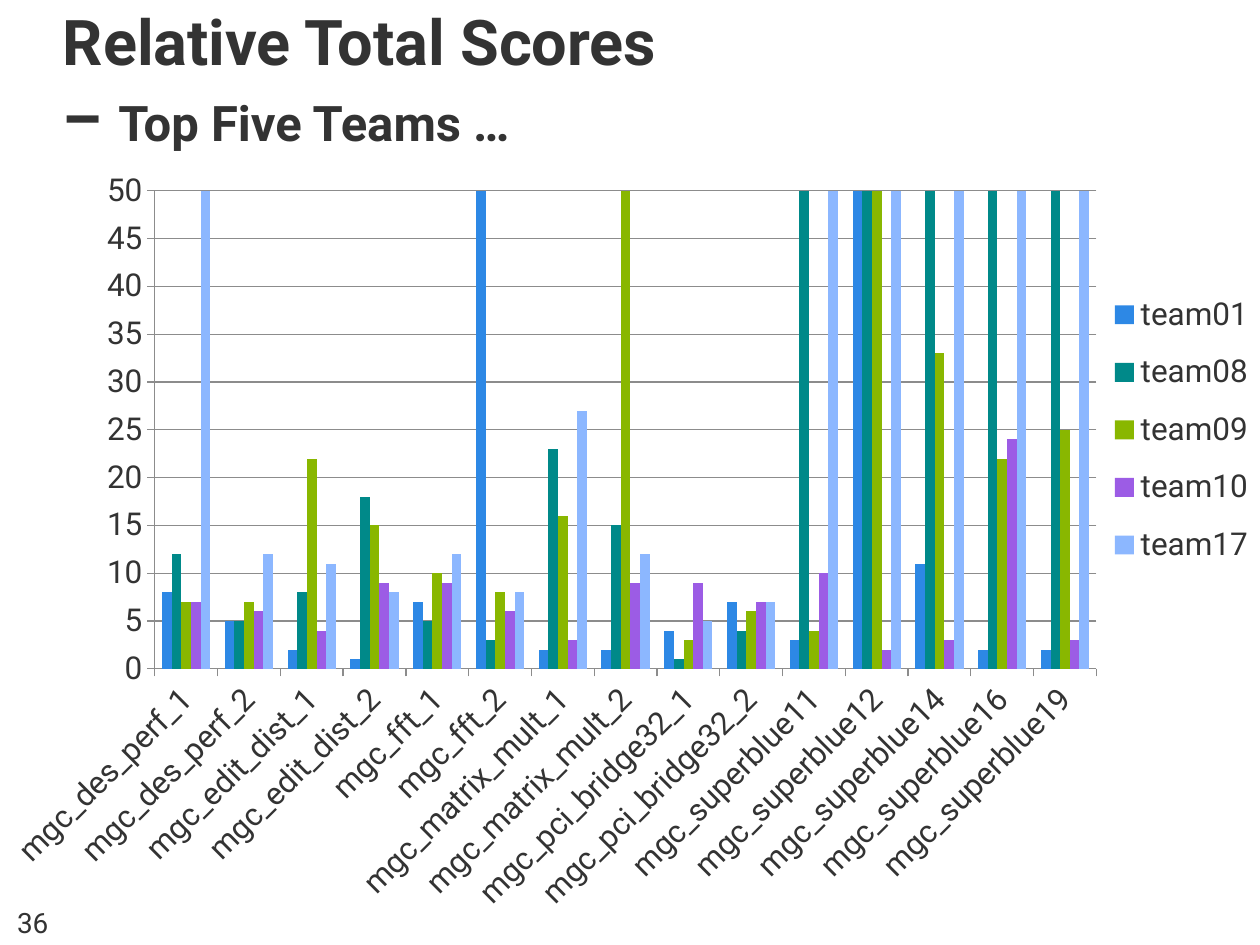
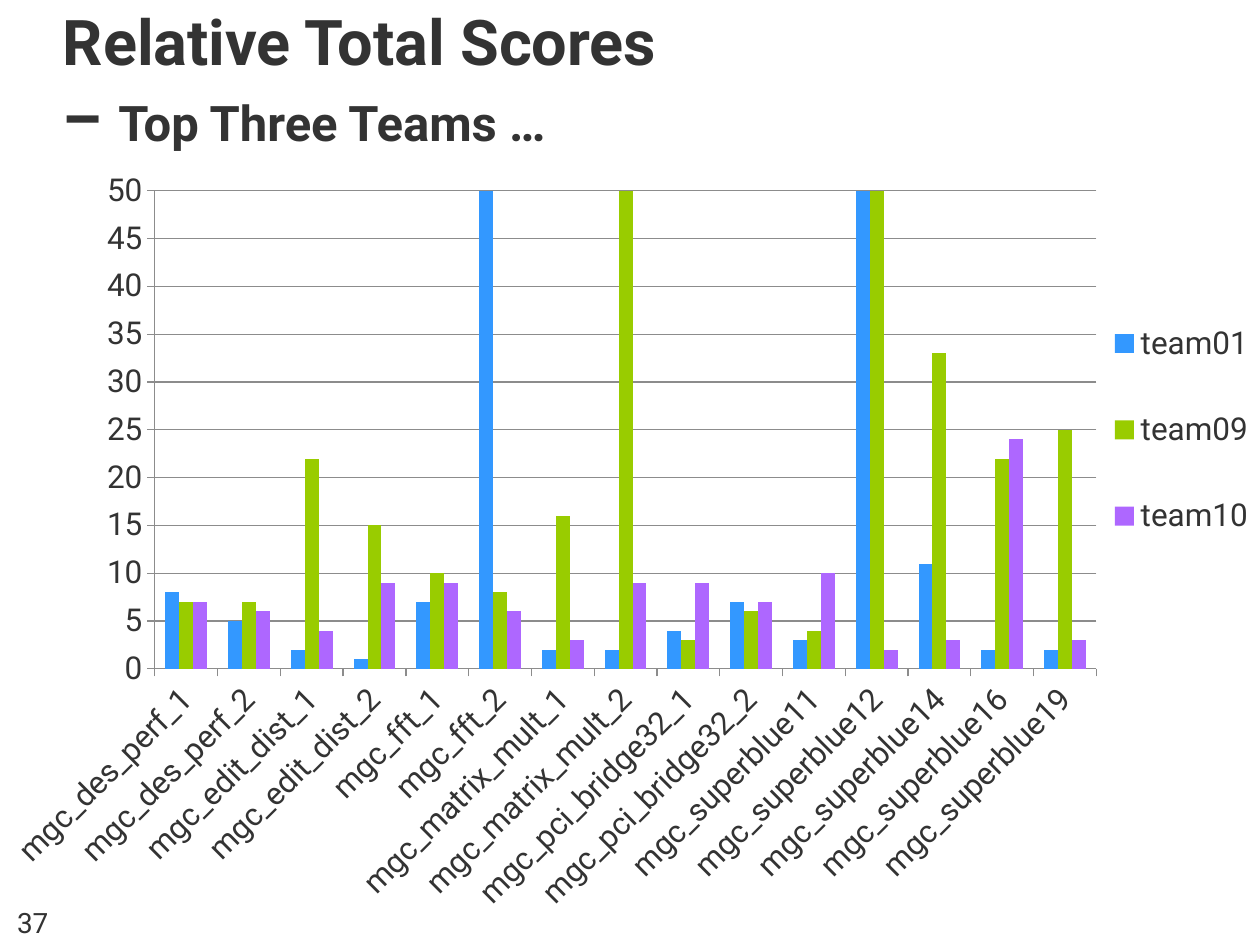
from lxml import etree
from pptx import Presentation
from pptx.chart.data import CategoryChartData
from pptx.dml.color import RGBColor
from pptx.enum.chart import XL_CHART_TYPE as ChartType
from pptx.enum.chart import XL_LEGEND_POSITION as LegendPos
from pptx.enum.chart import XL_TICK_MARK as Tick
from pptx.enum.text import MSO_ANCHOR as Anchor
from pptx.enum.text import PP_ALIGN as Align
from pptx.oxml.ns import qn
from pptx.util import Inches, Pt

FONT = "Roboto"
INK = "333333"
GRID = "8C8C8C"
TITLE_BOX = (0, 0.1, 10, 1.17)
NUMBER_BOX = (0, 7.25, 0.52, 0.25)
CHART_BOX = (-0.12, 1.27, 10.38, 6.12)
PLOT_AREA = (0.13, 0.04, 0.72, 0.62)
LEGEND_AREA = (0.86, 0.15, 0.11, 0.4)

BENCHMARKS = [
    "mgc_des_perf_1", "mgc_des_perf_2", "mgc_edit_dist_1", "mgc_edit_dist_2",
    "mgc_fft_1", "mgc_fft_2", "mgc_matrix_mult_1", "mgc_matrix_mult_2",
    "mgc_pci_bridge32_1", "mgc_pci_bridge32_2", "mgc_superblue11",
    "mgc_superblue12", "mgc_superblue14", "mgc_superblue16", "mgc_superblue19",
]
SCORES = {
    "team01": [8, 5, 2, 1, 7, 50, 2, 2, 4, 7, 3, 50, 11, 2, 2],
    "team08": [12, 5, 8, 18, 5, 3, 23, 15, 1, 4, 50, 50, 50, 50, 50],
    "team09": [7, 7, 22, 15, 10, 8, 16, 50, 3, 6, 4, 50, 33, 22, 25],
    "team10": [7, 6, 4, 9, 9, 6, 3, 9, 9, 7, 10, 2, 3, 24, 3],
    "team17": [50, 12, 11, 8, 12, 8, 27, 12, 5, 7, 50, 50, 50, 50, 50],
}
TOP_FIVE = {"team01": "2D88E5", "team08": "008989", "team09": "89B700",
            "team10": "9C5CE5", "team17": "8CB7FF"}
TOP_THREE = {"team01": "3398FF", "team09": "99CC00", "team10": "AE67FF"}


def rgb(value):
    return RGBColor.from_string(value)


def style_font(font, size, bold=False):
    font.name = FONT
    font.size = Pt(size)
    font.bold = bold
    font.color.rgb = rgb(INK)


def add_text_frame(s, box):
    tf = s.shapes.add_textbox(*map(Inches, box)).text_frame
    tf.word_wrap = True
    tf.vertical_anchor = Anchor.BOTTOM
    return tf


def add_title(s, box, subtitle):
    tf = add_text_frame(s, box)
    tf.margin_left = tf.margin_right = Inches(0.5)
    p = tf.paragraphs[0]
    style_font(p.font, 36, True)
    p.add_run().text = "Relative Total Scores"
    p.add_line_break()
    p.add_run().text = "– "
    r = p.add_run()
    r.text = subtitle
    for run in p.runs:
        style_font(run.font, 36, True)
    r.font.size = Pt(28)


def add_number(s, box, number):
    p = add_text_frame(s, box).paragraphs[0]
    p.text = str(number)
    p.alignment = Align.CENTER
    style_font(p.font, 16)


def make_layout(area, inner=False):
    layout = etree.Element(qn("c:layout"))
    manual = etree.SubElement(layout, qn("c:manualLayout"))
    settings = [("layoutTarget", "inner")] if inner else []
    settings += [("xMode", "edge"), ("yMode", "edge")]
    settings += zip("xywh", map(str, area))
    for tag, value in settings:
        etree.SubElement(manual, qn(f"c:{tag}")).set("val", value)
    return layout


def drop_layout(element):
    for layout in element.findall(qn("c:layout")):
        element.remove(layout)


def style_axes(chart):
    cat, val = chart.category_axis, chart.value_axis
    for axis in (cat, val):
        axis.has_title = False
        axis.major_tick_mark = Tick.OUTSIDE
        axis.minor_tick_mark = Tick.NONE
        axis.format.line.color.rgb = rgb(GRID)
        style_font(axis.tick_labels.font, 18)
    cat.has_major_gridlines = False
    cat._element.find(f"{qn('c:txPr')}/{qn('a:bodyPr')}").set("rot", "-2700000")
    val.minimum_scale, val.maximum_scale, val.major_unit = 0, 50, 5
    val.has_major_gridlines = True
    val.major_gridlines.format.line.color.rgb = rgb(GRID)
    val.tick_labels.number_format = "0"
    val.tick_labels.number_format_is_linked = False


def place_plot_and_legend(chart):
    plot_area = chart._chartSpace.chart.plotArea
    drop_layout(plot_area)
    plot_area.insert(0, make_layout(PLOT_AREA, inner=True))
    chart.has_legend = True
    legend = chart.legend
    legend.position = LegendPos.RIGHT
    legend.include_in_layout = False
    style_font(legend.font, 18)
    drop_layout(legend._element)
    legend._element.get_or_add_legendPos().addnext(make_layout(LEGEND_AREA))


def add_score_chart(s, box, team_colors):
    data = CategoryChartData(number_format="0")
    data.categories = BENCHMARKS
    for team in team_colors:
        data.add_series(team, SCORES[team])
    chart = s.shapes.add_chart(
        ChartType.COLUMN_CLUSTERED, *map(Inches, box), data).chart
    chart.has_title = False
    style_font(chart.font, 18)
    plot = chart.plots[0]
    plot.gap_width = 150
    plot.overlap = 0
    plot.vary_by_categories = False
    for series in plot.series:
        series.invert_if_negative = False
        series.format.fill.solid()
        series.format.fill.fore_color.rgb = rgb(team_colors[series.name])
    style_axes(chart)
    place_plot_and_legend(chart)


def add_score_slide(prs, number, subtitle, team_colors):
    s = prs.slides.add_slide(prs.slide_layouts[6])
    add_number(s, NUMBER_BOX, number)
    add_title(s, TITLE_BOX, subtitle)
    add_score_chart(s, CHART_BOX, team_colors)


def main():
    prs = Presentation()
    prs.slide_width, prs.slide_height = Inches(10), Inches(7.5)
    add_score_slide(prs, 36, "Top Five Teams …", TOP_FIVE)
    add_score_slide(prs, 37, "Top Three Teams …", TOP_THREE)
    prs.save("out.pptx")


if __name__ == "__main__":
    main()
